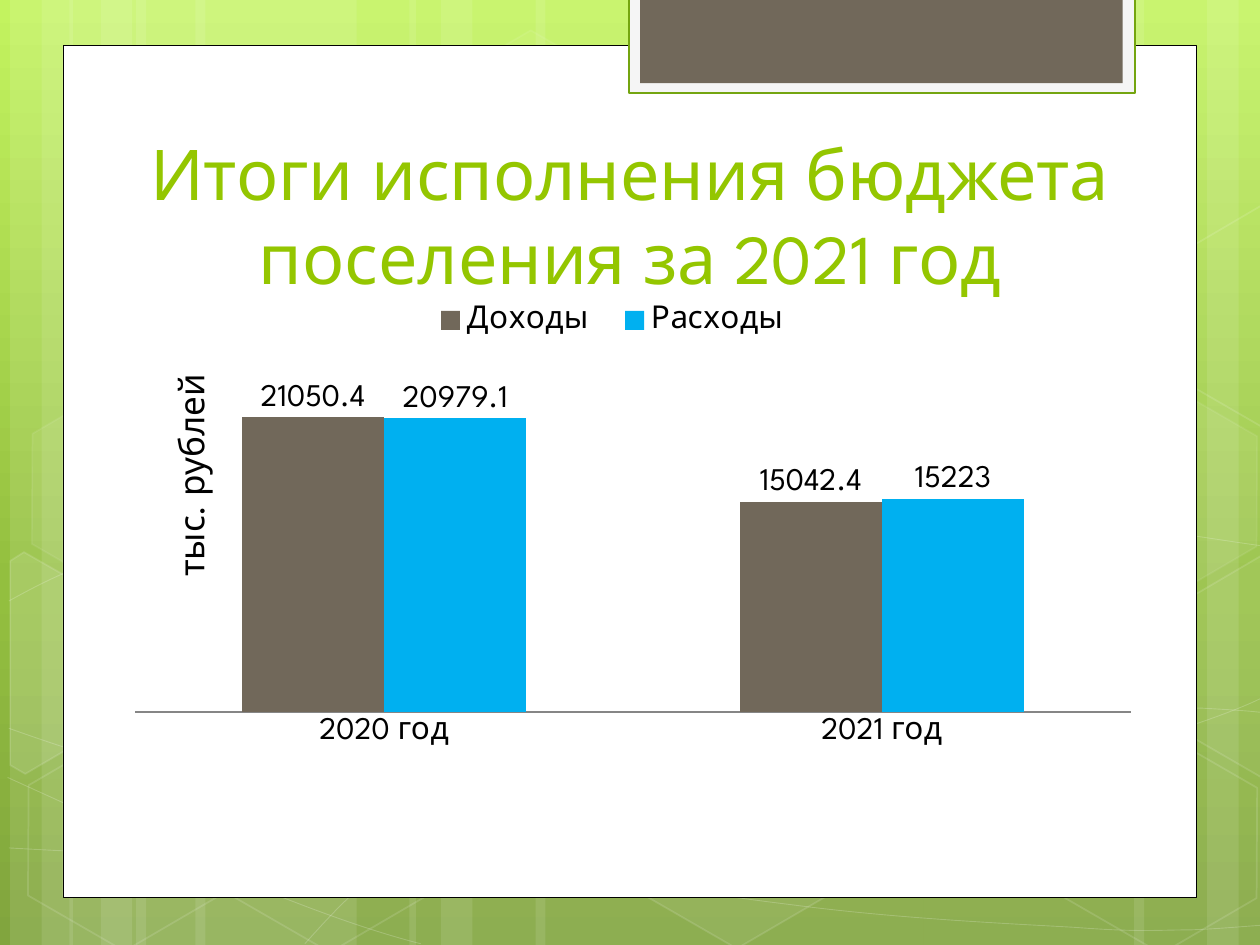
from copy import deepcopy
from math import cos, radians, sin

from lxml import etree
from pptx import Presentation
from pptx.chart.data import CategoryChartData
from pptx.dml.color import RGBColor
from pptx.enum.chart import XL_CHART_TYPE, XL_LABEL_POSITION, XL_LEGEND_POSITION, XL_TICK_MARK
from pptx.enum.shapes import MSO_SHAPE
from pptx.enum.text import MSO_ANCHOR, PP_ALIGN
from pptx.oxml.ns import qn
from pptx.util import Inches, Pt

RECTANGLE, HEXAGON = MSO_SHAPE.RECTANGLE, MSO_SHAPE.HEXAGON
LEFT, CENTER = PP_ALIGN.LEFT, PP_ALIGN.CENTER
TOP, BOTTOM = MSO_ANCHOR.TOP, MSO_ANCHOR.BOTTOM

FONT = "League Spartan"
WHITE = RGBColor(0xFF, 0xFF, 0xFF)
BLACK = RGBColor(0x00, 0x00, 0x00)
PALE_GRAY = RGBColor(0xF5, 0xF5, 0xF5)
BROWN = RGBColor(0x71, 0x68, 0x5A)
BLUE = RGBColor(0x00, 0xB0, 0xF0)
TITLE_GREEN = RGBColor(0x94, 0xC6, 0x00)
BORDER_GREEN = RGBColor(0x74, 0xA5, 0x10)
AXIS_GRAY = RGBColor(0x86, 0x86, 0x86)
BACKGROUND_STOPS = [
    (0, RGBColor(0xC3, 0xF3, 0x5F)),
    (0.62, RGBColor(0x93, 0xBF, 0x3F)),
    (1, RGBColor(0x81, 0xA5, 0x3E)),
]
TILT = 30


def paint(shape, fill=None, line=None, width=1, fill_alpha=100, line_alpha=100):
    """Set fill and outline; alphas are percent opacity, and None means unpainted."""
    shape.shadow.inherit = False
    for target, color, alpha in ((shape.fill, fill, fill_alpha),
                                 (shape.line.fill, line, line_alpha)):
        if color is None or alpha == 0:
            target.background()
            continue
        target.solid()
        target.fore_color.rgb = color
        if alpha < 100:
            owner = shape.element.spPr
            if target is not shape.fill:
                owner = owner.find(qn("a:ln"))
            color_element = owner.find(qn("a:solidFill"))[0]
            etree.SubElement(color_element, qn("a:alpha"), val=str(alpha * 1000))
    if line is not None:
        shape.line.width = Pt(width)


def add_text(text, left, top, width, height, size, color, align=LEFT, anchor=TOP, rotation=0):
    box = slide.shapes.add_textbox(Inches(left), Inches(top), Inches(width), Inches(height))
    box.rotation = rotation
    frame = box.text_frame
    frame.word_wrap = True
    frame.vertical_anchor = anchor
    paragraph = frame.paragraphs[0]
    paragraph.alignment = align
    run = paragraph.add_run()
    run.text = text
    run.font.name = FONT
    run.font.size = Pt(size)
    run.font.color.rgb = color


def add_outline(points, close):
    corners = [(Inches(x), Inches(y)) for x, y in points]
    builder = slide.shapes.build_freeform(*corners[0])
    builder.add_line_segments(corners[1:], close=close)
    return builder.convert_to_shape()


presentation = Presentation()
presentation.slide_width = Inches(10)
presentation.slide_height = Inches(7.5)
slide = presentation.slides.add_slide(presentation.slide_layouts[6])

# Background gradient
background = slide.background.fill
background.gradient()
background.gradient_angle = 270
stop_list = slide.element.find(".//" + qn("a:gsLst"))
stop_list.append(deepcopy(stop_list[0]))
for stop, (position, color) in zip(background.gradient_stops, BACKGROUND_STOPS):
    stop.position = position
    stop.color.rgb = color

# Translucent vertical bands: left, width, rotation
BANDS = [
    (1.08, 1.75, 0), (0.08, 0.5, 0), (0.33, 0.83, 0), (1.55, 1.75, 0), (0.55, 0.5, 0),
    (0.8, 0.83, 0), (7.33, 1.75, 180), (9.58, 0.5, 180), (9, 0.83, 180), (4.25, 3.08, 0),
    (3.25, 0.5, 0), (3.5, 0.83, 0),
]
for left, width, rotation in BANDS:
    band = slide.shapes.add_shape(RECTANGLE, Inches(left), 0, Inches(width), Inches(7.5))
    band.rotation = rotation
    paint(band, fill=WHITE, fill_alpha=10)

# Thin waves: a start point, then three Bezier points for each segment
WAVES = [
    [(0.07, 6.73), (0.61, 6.76), (1.15, 6.79), (1.9, 6.78), (2.65, 6.77), (3.58, 6.75),
     (4.58, 6.65), (5.58, 6.55), (7, 6.36), (7.92, 6.17), (8.83, 5.98), (9.77, 5.68),
     (10.07, 5.51)],
    [(0.07, 4.77), (0.36, 4.61), (0.65, 4.46), (1.21, 4.31), (1.78, 4.16), (2.59, 3.94),
     (3.47, 3.87), (4.36, 3.8), (5.44, 3.79), (6.54, 3.87), (7.64, 3.95), (9.47, 4.26),
     (10.07, 4.34)],
    [(0.06, 6.17), (1.27, 6.72), (2.47, 7.27), (3.34, 7.49)],
    [(0.07, 5.78), (0.38, 5.89), (0.7, 6), (1.28, 6.16), (1.86, 6.31), (2.73, 6.56),
     (3.57, 6.73), (4.4, 6.9), (5.45, 7.08), (6.28, 7.18), (7.11, 7.29), (8, 7.33),
     (8.53, 7.36), (9.05, 7.4), (9.19, 7.38), (9.45, 7.38), (9.71, 7.37), (9.89, 7.35),
     (10.07, 7.34)],
    [(2.42, 7.49), (2.6, 7.29), (2.78, 7.09), (3.02, 6.91), (3.26, 6.73), (3.6, 6.53),
     (3.88, 6.39), (4.16, 6.25), (4.33, 6.19), (4.7, 6.09), (5.06, 5.99), (5.73, 5.85),
     (6.08, 5.78), (6.44, 5.71), (6.49, 5.71), (6.8, 5.69), (7.11, 5.66), (7.6, 5.63),
     (7.94, 5.62), (8.29, 5.61), (8.86, 5.62), (8.86, 5.62), (9.08, 5.62), (9.31, 5.62),
     (9.53, 5.62), (9.71, 5.63), (9.88, 5.64), (9.97, 5.65), (10.06, 5.66), (10.03, 5.65),
     (10.06, 5.66)],
]
for wave in WAVES:
    curve = add_outline(wave, close=False)
    outline_path = curve.element.find(".//" + qn("a:path"))
    segments = outline_path.findall(qn("a:lnTo"))
    for first in range(0, len(segments), 3):
        bezier = etree.SubElement(outline_path, qn("a:cubicBezTo"))
        for segment in segments[first:first + 3]:
            bezier.append(segment[0])
            outline_path.remove(segment)
    paint(curve, line=WHITE, width=0.5, line_alpha=20)

# Whole hexagons: left, top, fill opacity, line opacity
HEXAGONS = [
    (3.34, 0.36, 4, 8), (4.97, 5.89, 6, 12), (0.11, 5.91, 0, 12), (0.14, 3.12, 7, 8),
    (1.74, 5.92, 0, 12), (7.53, 4.53, 10, 12), (8.34, 5.93, 0, 12), (8.34, 3.14, 7, 8),
]
for left, top, fill_alpha, line_alpha in HEXAGONS:
    hexagon = slide.shapes.add_shape(HEXAGON, Inches(left), Inches(top), Inches(1.75), Inches(1.52))
    hexagon.adjustments[0] = 0.285
    hexagon.rotation = TILT
    paint(hexagon, fill=WHITE, line=WHITE, fill_alpha=fill_alpha, line_alpha=line_alpha)

# Hexagons cut by the slide edges: fill opacity, centre, corners as they stand after the tilt
CUT_HEXAGONS = [
    (10, (0.36, 5.35),
     [(0.08, 4.45), (0.19, 4.38), (0.96, 4.82), (0.95, 5.7), (0.2, 6.14), (0.08, 6.07)]),
    (4, (9.85, 5.2),
     [(9.26, 4.85), (10.01, 4.41), (10.09, 4.46), (10.09, 6.13), (10.02, 6.17), (9.26, 5.73)]),
    (0, (9.85, 2.41),
     [(9.26, 2.07), (10.01, 1.63), (10.1, 1.68), (10.09, 3.35), (10.02, 3.39), (9.26, 2.95)]),
]
cosine, sine = cos(radians(TILT)), sin(radians(TILT))
for fill_alpha, (center_x, center_y), corners in CUT_HEXAGONS:
    upright = [(center_x + (x - center_x) * cosine + (y - center_y) * sine,
                center_y + (y - center_y) * cosine - (x - center_x) * sine)
               for x, y in corners]
    cut_hexagon = add_outline(upright, close=True)
    cut_hexagon.rotation = TILT
    paint(cut_hexagon, fill=WHITE, line=WHITE, fill_alpha=fill_alpha, line_alpha=12)

# White page and the tab at its top
PANELS = [
    (0.5, 0.36, 9, 6.76, WHITE, BLACK, 0.5),
    (4.99, -0.02, 4.02, 0.76, PALE_GRAY, BORDER_GREEN, 1.25),
    (5.08, -0.02, 3.83, 0.68, BROWN, None, 0),
]
for left, top, width, height, fill, line, line_width in PANELS:
    panel = slide.shapes.add_shape(
        RECTANGLE, Inches(left), Inches(top), Inches(width), Inches(height))
    paint(panel, fill=fill, line=line, width=line_width)

add_text("Итоги исполнения бюджета поселения за 2021 год", 0.51, 0.92, 8.98, 1.5,
         size=40, color=TITLE_GREEN, align=CENTER, anchor=BOTTOM)

# Budget chart
chart_data = CategoryChartData()
chart_data.categories = ["2020 год", "2021 год"]
chart_data.add_series("Доходы", (21050.4, 15042.4))
chart_data.add_series("Расходы", (20979.1, 15223))
chart = slide.shapes.add_chart(
    XL_CHART_TYPE.COLUMN_CLUSTERED, Inches(0.91), Inches(2.25), Inches(8.23), Inches(3.91),
    chart_data).chart
chart.font.name = FONT
chart.font.size = Pt(18)
chart.font.color.rgb = BLACK
chart.has_title = False
chart.has_legend = True
chart.legend.position = XL_LEGEND_POSITION.TOP
chart.legend.include_in_layout = False
chart.value_axis.visible = False
chart.value_axis.has_major_gridlines = False
chart.value_axis.minimum_scale = 0
chart.value_axis.maximum_scale = 25000
chart.category_axis.major_tick_mark = XL_TICK_MARK.NONE
chart.category_axis.format.line.color.rgb = AXIS_GRAY
chart.category_axis.format.line.width = Pt(0.75)

plot = chart.plots[0]
plot.gap_width = 150
plot.overlap = 0
plot.vary_by_categories = False
for series, color in zip(plot.series, (BROWN, BLUE)):
    series.format.fill.solid()
    series.format.fill.fore_color.rgb = color
    series.data_labels.show_value = True
    series.data_labels.position = XL_LABEL_POSITION.OUTSIDE_END

# Places inside the chart, as shares of its size: part, child index, x, y, width, height
for part, index, *box in (("plotArea", 0, 0.02, 0.16, 0.96, 0.71),
                          ("legend", 1, 0.29, 0.02, 0.38, 0.11)):
    element = chart.element.find(".//" + qn("c:" + part))
    for old_layout in element.findall(qn("c:layout")):
        element.remove(old_layout)
    layout = etree.Element(qn("c:layout"))
    element.insert(index, layout)
    manual_layout = etree.SubElement(layout, qn("c:manualLayout"))
    settings = [("xMode", "edge"), ("yMode", "edge"), *zip("xywh", box)]
    if part == "plotArea":
        settings.insert(0, ("layoutTarget", "inner"))
    for tag, value in settings:
        etree.SubElement(manual_layout, qn("c:" + tag), val=str(value))

add_text("тыс. рублей", 0.53, 3.47, 1.97, 0.44, size=20, color=BLACK, rotation=270)

presentation.save("out.pptx")
